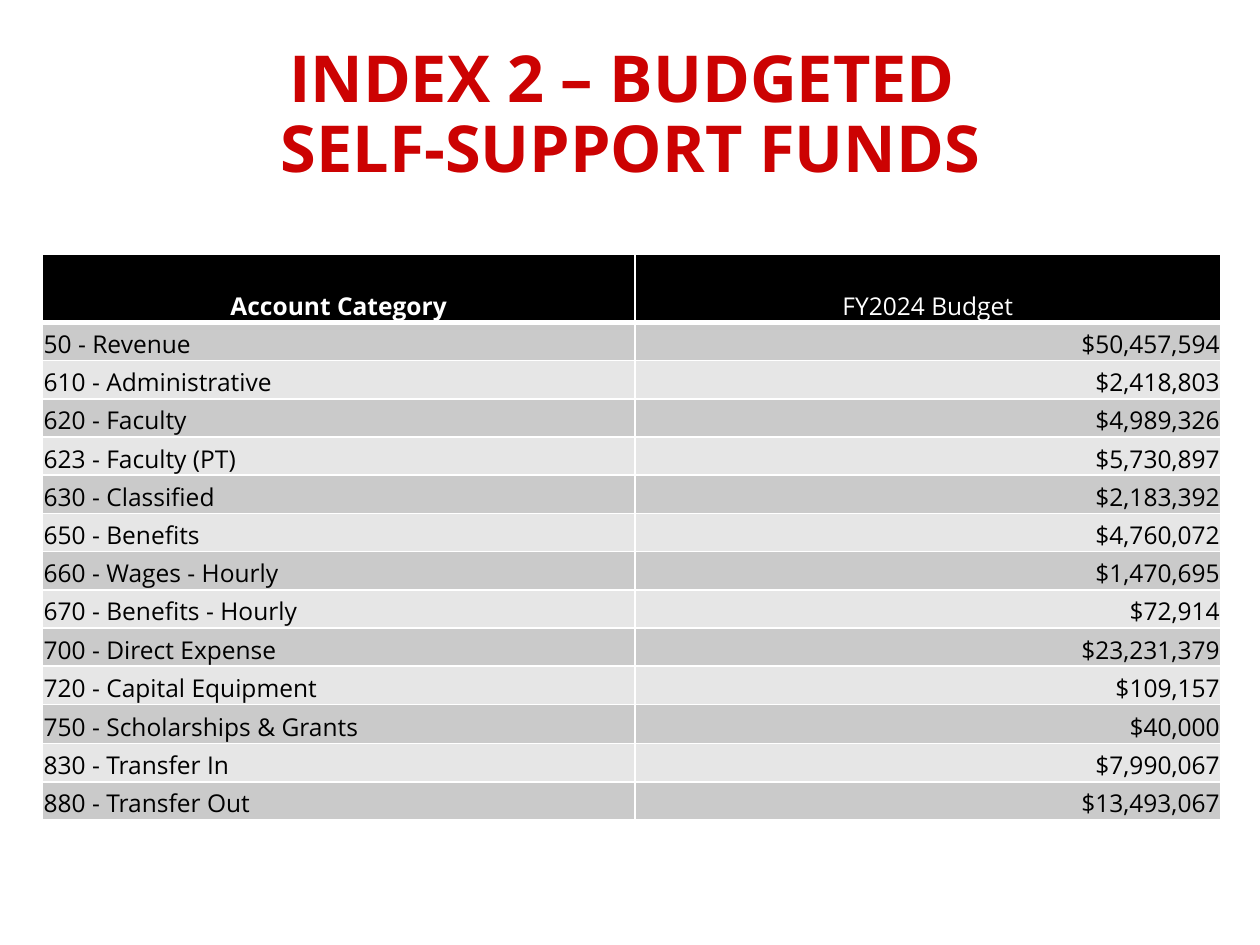
from dataclasses import dataclass

from lxml import etree
from pptx import Presentation
from pptx.dml.color import RGBColor
from pptx.enum import text
from pptx.oxml import ns
from pptx.util import Cm, Pt

TITLE = ["INDEX 2 – BUDGETED ", "SELF-SUPPORT FUNDS"]
HEADINGS = ("Account Category", "FY2024 Budget")
BUDGET = [
    ("50 - Revenue", "$50,457,594"),
    ("610 - Administrative", "$2,418,803"),
    ("620 - Faculty", "$4,989,326"),
    ("623 - Faculty (PT)", "$5,730,897"),
    ("630 - Classified", "$2,183,392"),
    ("650 - Benefits", "$4,760,072"),
    ("660 - Wages - Hourly", "$1,470,695"),
    ("670 - Benefits - Hourly", "$72,914"),
    ("700 - Direct Expense", "$23,231,379"),
    ("720 - Capital Equipment", "$109,157"),
    ("750 - Scholarships & Grants", "$40,000"),
    ("830 - Transfer In", "$7,990,067"),
    ("880 - Transfer Out", "$13,493,067"),
]
COLUMN_WIDTHS = (11.94, 11.81)
HEADER_HEIGHT = 1.37
ROW_HEIGHT = 0.77
TALL_ROWS = {11: 0.79}


@dataclass(frozen=True)
class Theme:
    font: str = "Open Sans"
    title_size: int = 37
    cell_size: int = 14
    title: str = "CC0202"
    header: str = "000000"
    header_text: str = "FFFFFF"
    body_text: str = "000000"
    bands: tuple = ("CACACA", "E6E6E6")
    border: str = "FFFFFF"


THEME = Theme()


def add_span(para, words, size, color, bold):
    span = para.add_run()
    span.text = words
    span.font.name = THEME.font
    span.font.size = Pt(size)
    span.font.bold = bold
    span.font.color.rgb = RGBColor.from_string(color)


def set_borders(cell, bottom):
    properties = cell._tc.get_or_add_tcPr()
    for side, width in (("L", 1), ("R", 1), ("T", 1), ("B", bottom)):
        line = etree.SubElement(properties, ns.qn(f"a:ln{side}"), w=str(Pt(width)))
        fill = etree.SubElement(line, ns.qn("a:solidFill"))
        etree.SubElement(fill, ns.qn("a:srgbClr"), val=THEME.border)


def fill_cell(cell, words, align, fill, color, bold=False, bottom=1):
    cell.margin_left = cell.margin_right = cell.margin_top = Cm(0.02)
    cell.margin_bottom = 0
    cell.vertical_anchor = text.MSO_ANCHOR.BOTTOM
    set_borders(cell, bottom)
    cell.fill.solid()
    cell.fill.fore_color.rgb = RGBColor.from_string(fill)
    para = cell.text_frame.paragraphs[0]
    para.alignment = align
    add_span(para, words, THEME.cell_size, color, bold)


def add_title(page):
    box = page.shapes.add_textbox(Cm(0.3), Cm(0.76), Cm(24.82), Cm(3.18))
    frame = box.text_frame
    frame.word_wrap = True
    frame.vertical_anchor = text.MSO_ANCHOR.MIDDLE
    para = frame.paragraphs[0]
    para.alignment = text.PP_ALIGN.CENTER
    para.line_spacing = 0.9
    for index, words in enumerate(TITLE):
        if index:
            para.add_line_break()
        add_span(para, words, THEME.title_size, THEME.title, True)


def add_budget_table(page):
    heights = [HEADER_HEIGHT] + [
        TALL_ROWS.get(number, ROW_HEIGHT) for number in range(1, len(BUDGET) + 1)
    ]
    table = page.shapes.add_table(
        len(heights), len(COLUMN_WIDTHS),
        Cm(0.86), Cm(5.13), Cm(sum(COLUMN_WIDTHS)), Cm(sum(heights)),
    ).table
    for column, width in zip(table.columns, COLUMN_WIDTHS):
        column.width = Cm(width)
    for row, height in zip(table.rows, heights):
        row.height = Cm(height)

    for column, heading in enumerate(HEADINGS):
        fill_cell(table.cell(0, column), heading, text.PP_ALIGN.CENTER,
                  THEME.header, THEME.header_text, bold=column == 0, bottom=3)
    alignments = (text.PP_ALIGN.LEFT, text.PP_ALIGN.RIGHT)
    for number, entry in enumerate(BUDGET, 1):
        band = THEME.bands[(number - 1) % 2]
        for column, (words, align) in enumerate(zip(entry, alignments)):
            cell = table.cell(number, column)
            fill_cell(cell, words, align, band, THEME.body_text,
                      bottom=1)
            if number == 1:
                top = cell._tc.tcPr.find(ns.qn("a:lnT"))
                top.set("w", str(Pt(3)))


def main():
    deck = Presentation()
    deck.slide_width, deck.slide_height = Cm(25.4), Cm(19.05)
    page = deck.slides.add_slide(deck.slide_layouts[6])
    add_title(page)
    add_budget_table(page)
    deck.save("out.pptx")


if __name__ == "__main__":
    main()
